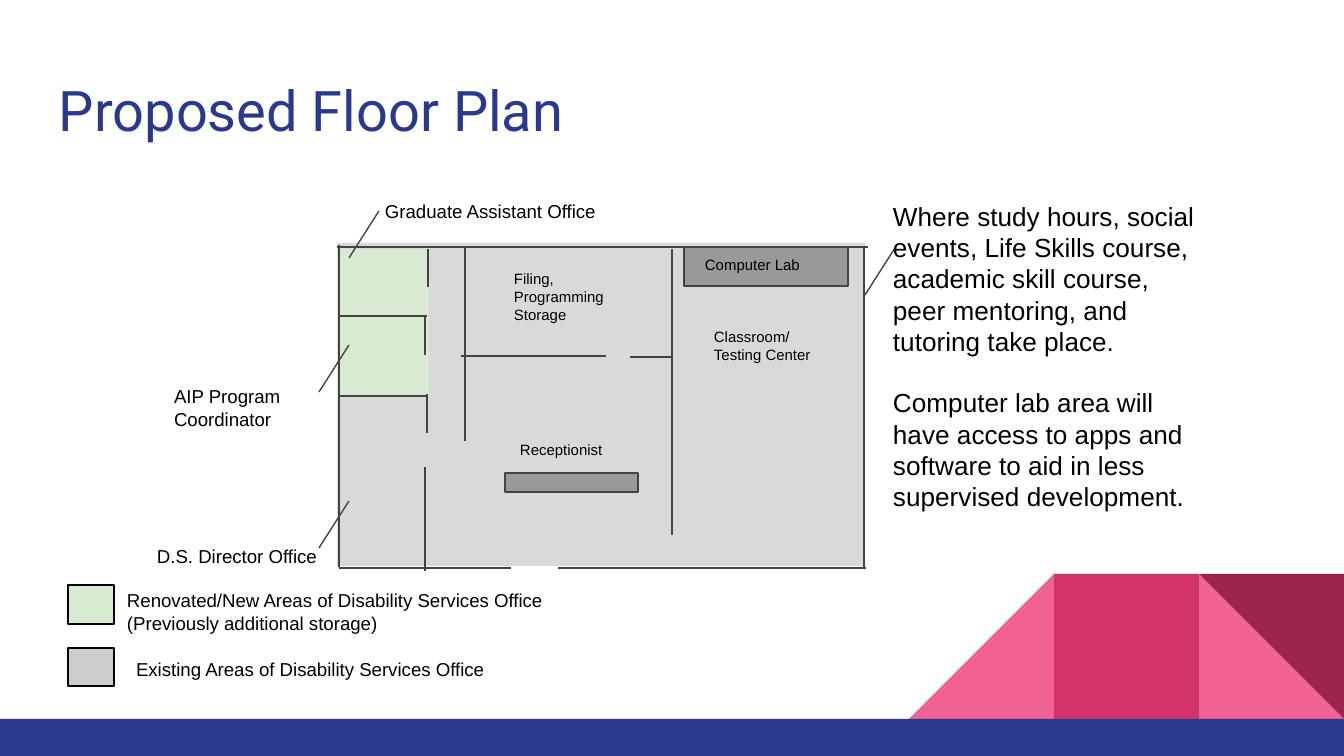
from dataclasses import dataclass

import pptx
import pptx.dml.color
import pptx.enum.shapes
import pptx.enum.text
import pptx.oxml
import pptx.util

PX = 914400 / 134.4
SHAPE = pptx.enum.shapes.MSO_SHAPE
ANCHOR = pptx.enum.text.MSO_ANCHOR
ALIGN = pptx.enum.text.PP_ALIGN
COLORS = {
    "navy": "2A3990", "pink": "F06292", "rose": "D23369", "wine": "9C254D",
    "floor": "D9D9D9", "new": "D9EAD3", "existing": "CCCCCC",
    "desk": "999999", "wall": "434343", "black": "000000",
}
INSET = px_inset = 13


@dataclass
class Block:
    x: int
    y: int
    w: int
    h: int
    fill: str
    line: str = ""
    kind: int = SHAPE.RECTANGLE
    flip: bool = False
    rotation: int = 0


@dataclass
class Line:
    x1: int
    y1: int
    x2: int
    y2: int


@dataclass
class Label:
    x: int
    y: int
    w: int
    h: int
    size: int
    paragraphs: list[str]
    gap: int = 0


def px(n: int) -> int:
    return round(n * PX)


def rgb(name: str) -> pptx.dml.color.RGBColor:
    return pptx.dml.color.RGBColor.from_string(COLORS[name])


def set_all(obj, values: dict) -> None:
    for name, value in values.items():
        setattr(obj, name, value)


def place(sp, x: int, y: int, w: int, h: int) -> None:
    set_all(sp, {"left": px(x), "top": px(y), "width": px(w), "height": px(h)})


def format_text(tf, paragraphs: list[str], size: int, font: str, color: str,
                anchor, gap: int = 0, spacing: float = 1.0) -> None:
    """Fill a text frame; gap is the space in points between paragraphs."""
    set_all(tf, {"word_wrap": True, "vertical_anchor": anchor,
                 "auto_size": pptx.enum.text.MSO_AUTO_SIZE.NONE})
    set_all(tf, {f"margin_{side}": px(INSET)
                 for side in ("left", "right", "top", "bottom")})
    for i, text in enumerate(paragraphs):
        p = tf.add_paragraph() if i else tf.paragraphs[0]
        p.text = text
        set_all(p, {"alignment": ALIGN.LEFT, "line_spacing": spacing,
                    "space_before": pptx.util.Pt(gap if i else 0)})
        for r in p.runs:
            set_all(r.font, {"size": pptx.util.Pt(size), "name": font})
            r.font.color.rgb = rgb(color)


def add_block(s, b: Block) -> None:
    sp = s.shapes.add_shape(b.kind, px(b.x), px(b.y), px(b.w), px(b.h))
    sp.shadow.inherit = False
    sp.rotation = b.rotation
    sp.fill.solid()
    sp.fill.fore_color.rgb = rgb(b.fill)
    if b.flip:
        sp.element.spPr.xfrm.set("flipH", "1")
    if b.line:
        sp.line.color.rgb = rgb(b.line)
        sp.line.width = pptx.util.Pt(0.75)
    else:
        sp.line.fill.background()


def add_line(s, line: Line) -> None:
    c = s.shapes.add_connector(
        pptx.enum.shapes.MSO_CONNECTOR.STRAIGHT,
        px(line.x1), px(line.y1), px(line.x2), px(line.y2))
    c.line.color.rgb = rgb("wall")
    c.line.width = pptx.util.Pt(0.75)
    c.element.spPr.append(pptx.oxml.parse_xml(
        '<a:effectLst xmlns:a="http://schemas.openxmlformats.org/drawingml/2006/main"/>'))


def add_label(s, t: Label) -> None:
    sp = s.shapes.add_textbox(px(t.x), px(t.y), px(t.w), px(t.h))
    format_text(sp.text_frame, t.paragraphs, t.size, "Arial", "black",
                ANCHOR.TOP, t.gap)


TILE = 145
TILE_Y = 574
DECOR = [
    Block(1344 - TILE, TILE_Y, TILE, TILE, "pink", kind=SHAPE.RIGHT_TRIANGLE),
    Block(1344 - 3 * TILE, TILE_Y, TILE, TILE, "pink",
          kind=SHAPE.RIGHT_TRIANGLE, flip=True),
    Block(1344 - 2 * TILE, TILE_Y, TILE, TILE, "rose"),
    Block(1344 - TILE, TILE_Y, TILE, TILE, "wine",
          kind=SHAPE.RIGHT_TRIANGLE, rotation=180),
    Block(0, 719, 1344, 37, "navy"),
]
ROOMS = [
    Block(337, 243, 528, 323, "floor"),
    Block(337, 249, 92, 147, "new"),
    Block(505, 473, 133, 19, "desk", "wall"),
    Block(684, 247, 164, 39, "desk", "wall"),
]
LEGEND = [
    Block(68, 585, 46, 39, "new", "black"),
    Block(68, 648, 46, 38, "existing", "black"),
]
OUTER_WALLS = [
    Line(339, 568, 511, 568), Line(558, 568, 866, 568),
    Line(339, 567, 339, 245), Line(337, 247, 868, 247),
    Line(864, 569, 864, 246),
]
INNER_WALLS = [
    Line(339, 316, 427, 316), Line(339, 396, 427, 396),
    Line(428, 287, 428, 249), Line(425, 355, 425, 316),
    Line(427, 433, 427, 394), Line(425, 571, 425, 467),
    Line(465, 441, 465, 247), Line(672, 249, 672, 535),
    Line(461, 356, 606, 356), Line(630, 357, 672, 357),
]
LEADERS = [Line(x, y, x + 30, y - 47)
           for x, y in ((349, 258), (319, 392), (319, 548), (865, 295))]
LABELS = [
    Label(372, 187, 355, 62, 10, ["Graduate Assistant Office"]),
    Label(161, 372, 355, 62, 10, ["AIP Program", "Coordinator"]),
    Label(144, 532, 355, 62, 10, ["D.S. Director Office"]),
    Label(114, 576, 517, 62, 10,
          ["Renovated/New Areas of Disability Services Office\v"
           "(Previously additional storage)"]),
    Label(123, 645, 517, 62, 10, ["Existing Areas of Disability Services Office"]),
    Label(701, 315, 133, 107, 8, ["Classroom/\vTesting Center"]),
    Label(507, 431, 133, 19, 8, ["Receptionist"]),
    Label(692, 246, 133, 19, 8, ["Computer Lab"]),
    Label(501, 257, 133, 107, 8, ["Filing, Programming Storage"]),
    Label(880, 187, 340, 286, 14,
          ["Where study hours, social events, Life Skills course, academic skill "
           "course, peer mentoring, and tutoring take place.",
           "Computer lab area will have access to apps and software to aid in "
           "less supervised development."], gap=16),
]


def main() -> None:
    prs = pptx.Presentation()
    set_all(prs, {"slide_width": px(1344), "slide_height": px(756)})
    s = prs.slides.add_slide(prs.slide_layouts[5])
    title = s.shapes.title
    place(title, 46, 60, 1253, 89)
    format_text(title.text_frame, ["Proposed Floor Plan"], 30, "Roboto", "navy",
                ANCHOR.MIDDLE, spacing=1.15)
    for block in DECOR + ROOMS + LEGEND:
        add_block(s, block)
    for line in OUTER_WALLS + INNER_WALLS + LEADERS:
        add_line(s, line)
    for label in LABELS:
        add_label(s, label)
    prs.save("out.pptx")


if __name__ == "__main__":
    main()
